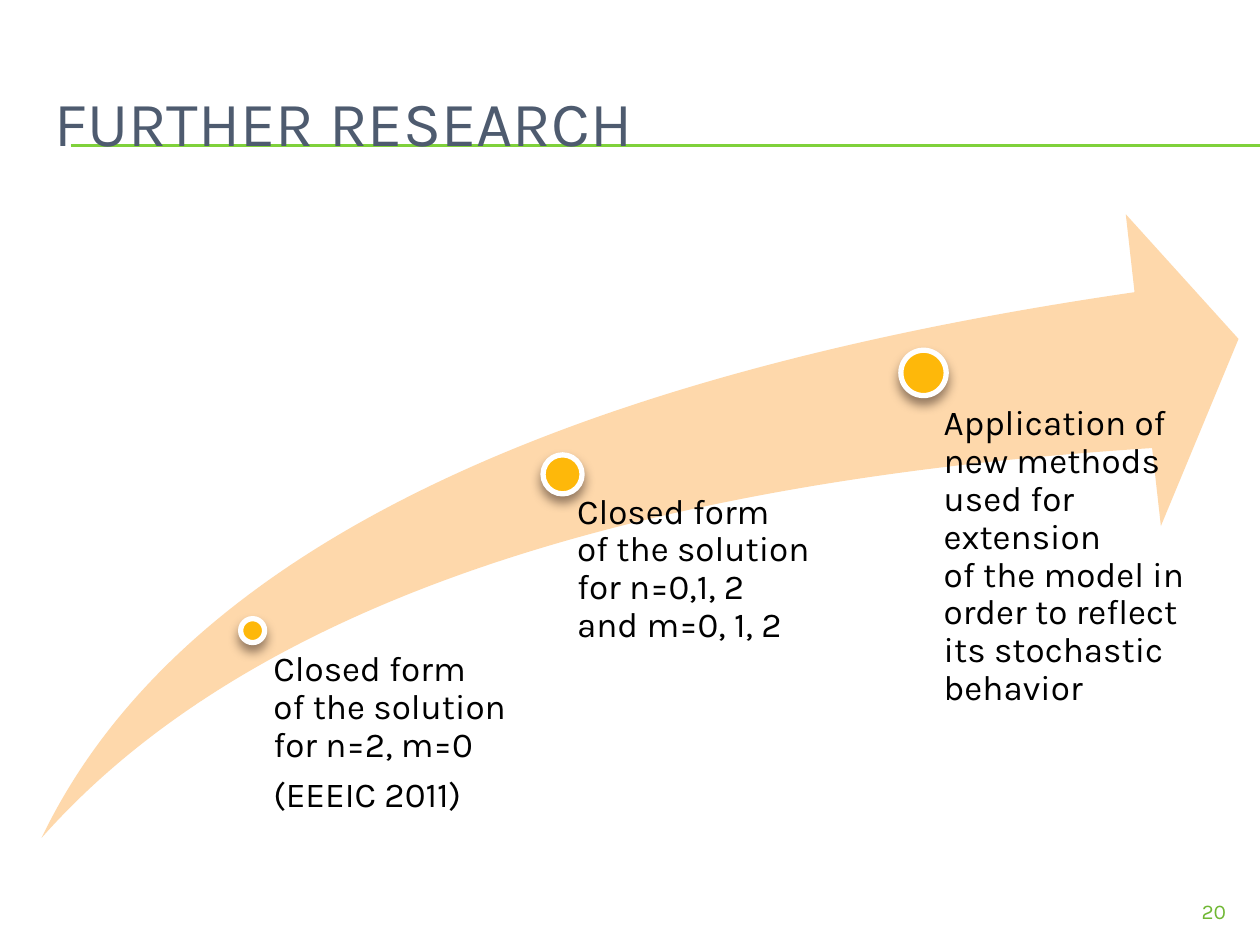
from dataclasses import dataclass

from lxml import etree
from pptx import Presentation
from pptx.dml.color import RGBColor
from pptx.enum.shapes import MSO_CONNECTOR, MSO_SHAPE
from pptx.enum.text import MSO_ANCHOR, MSO_AUTO_SIZE, PP_ALIGN
from pptx.oxml.ns import qn
from pptx.slide import Slide
from pptx.text.text import _Paragraph as Paragraph
from pptx.util import Inches, Pt

STRAIGHT = MSO_CONNECTOR.STRAIGHT
SWOOSH = MSO_SHAPE.SWOOSH_ARROW
OVAL = MSO_SHAPE.OVAL
MIDDLE = MSO_ANCHOR.MIDDLE
NO_AUTOFIT = MSO_AUTO_SIZE.NONE
LEFT = PP_ALIGN.LEFT
RIGHT = PP_ALIGN.RIGHT
TITLE_ONLY_LAYOUT = 5


@dataclass(frozen=True)
class Theme:
    font: str = "Karla"
    title: str = "4E5B6F"
    rule: str = "7FD13B"
    arrow: str = "FED8AB"
    marker: str = "FEB80A"
    marker_edge: str = "FFFFFF"
    marker_shadow: str = "4E3B30"
    text: str = "000000"
    page_number: str = "70B834"
    title_size: int = 36
    text_size: int = 20
    page_number_size: int = 12


@dataclass(frozen=True)
class Box:
    left: float
    top: float
    width: float
    height: float

    def lengths(self) -> tuple[int, int, int, int]:
        return (Inches(self.left), Inches(self.top), Inches(self.width), Inches(self.height))


@dataclass(frozen=True)
class Milestone:
    marker: Box
    label: Box
    paragraphs: tuple[tuple[str, ...], ...]


THEME = Theme()

MILESTONES = (
    Milestone(
        Box(1.91, 4.91, 0.19, 0.19),
        Box(2.01, 5.01, 2.38, 1.29),
        (("Closed form ", "of the solution ", "for n=2, m=0"), ("(EEEIC 2011)",)),
    ),
    Milestone(
        Box(4.31, 3.61, 0.31, 0.31),
        Box(4.42, 3.76, 2.78, 1.29),
        (("Closed form ", "of the solution ", "for n=0,1, 2 ", "and m=0, 1, 2"),),
    ),
    Milestone(
        Box(7.15, 2.78, 0.36, 0.36),
        Box(7.33, 3.06, 2.38, 2.65),
        ((
            "Application of new methods used for extension ",
            "of the model in order to reflect its stochastic behavior",
        ),),
    ),
)


def add_span(para: Paragraph, text: str, size: int, color: str) -> None:
    span = para.add_run()
    span.text = text
    span.font.name = THEME.font
    span.font.size = Pt(size)
    span.font.color.rgb = RGBColor.from_string(color)


def add_rule(slide: Slide, top: float) -> None:
    rule = slide.shapes.add_connector(
        STRAIGHT, Inches(0.56), Inches(top), Inches(10), Inches(top)
    )
    rule.line.color.rgb = RGBColor.from_string(THEME.rule)
    rule.line.width = Pt(0.75)
    etree.SubElement(rule.element.spPr, qn("a:effectLst"))


def add_title(slide: Slide, text: str) -> None:
    title = slide.shapes.title
    title.left, title.top, title.width, title.height = Box(0.33, 0.5, 9.5, 0.92).lengths()
    frame = title.text_frame
    frame.auto_size = NO_AUTOFIT
    frame.vertical_anchor = MIDDLE
    para = frame.paragraphs[0]
    para.alignment = LEFT
    add_span(para, text, THEME.title_size, THEME.title)
    slide.shapes.element.append(title.element)


def add_arrow(slide: Slide, box: Box) -> None:
    arrow = slide.shapes.add_shape(SWOOSH, *box.lengths())
    arrow.shadow.inherit = False
    arrow.fill.solid()
    arrow.fill.fore_color.rgb = RGBColor.from_string(THEME.arrow)
    arrow.line.fill.background()


def add_marker(slide: Slide, box: Box) -> None:
    marker = slide.shapes.add_shape(OVAL, *box.lengths())
    marker.fill.solid()
    marker.fill.fore_color.rgb = RGBColor.from_string(THEME.marker)
    marker.line.color.rgb = RGBColor.from_string(THEME.marker_edge)
    marker.line.width = Pt(3)
    marker.shadow.inherit = False
    effects = marker.element.spPr.find(qn("a:effectLst"))
    shadow = etree.SubElement(
        effects,
        qn("a:outerShdw"),
        blurRad=str(Pt(6)),
        dist=str(Pt(4)),
        dir="5400000",
        rotWithShape="0",
    )
    color = etree.SubElement(shadow, qn("a:srgbClr"), val=THEME.marker_shadow)
    etree.SubElement(color, qn("a:alpha"), val="60000")


def add_label(slide: Slide, box: Box, paragraphs: tuple[tuple[str, ...], ...]) -> None:
    frame = slide.shapes.add_textbox(*box.lengths()).text_frame
    frame.word_wrap = True
    frame.margin_left = frame.margin_right = Inches(0.16)
    frame.margin_top = frame.margin_bottom = Inches(0.16)
    for index, lines in enumerate(paragraphs):
        para = frame.add_paragraph() if index else frame.paragraphs[0]
        para.line_spacing = 0.9
        para.space_after = Pt(7)
        for number, line in enumerate(lines):
            if number:
                para.add_line_break()
            add_span(para, line, THEME.text_size, THEME.text)


def add_page_number(slide: Slide, number: str) -> None:
    frame = slide.shapes.add_textbox(*Box(9, 7.08, 0.83, 0.27).lengths()).text_frame
    frame.word_wrap = True
    para = frame.paragraphs[0]
    para.alignment = RIGHT
    add_span(para, number, THEME.page_number_size, THEME.page_number)


def main() -> None:
    deck = Presentation()
    deck.slide_width = Inches(10)
    deck.slide_height = Inches(7.5)
    page = deck.slides.add_slide(deck.slide_layouts[TITLE_ONLY_LAYOUT])
    for top in (1.15, 1.16):
        add_rule(page, top)
    add_title(page, "FURTHER RESEARCH")
    add_arrow(page, Box(0.33, 1.7, 9.5, 4.95))
    for milestone in MILESTONES:
        add_label(page, milestone.label, milestone.paragraphs)
        add_marker(page, milestone.marker)
    add_page_number(page, "20")
    deck.save("out.pptx")


if __name__ == "__main__":
    main()
